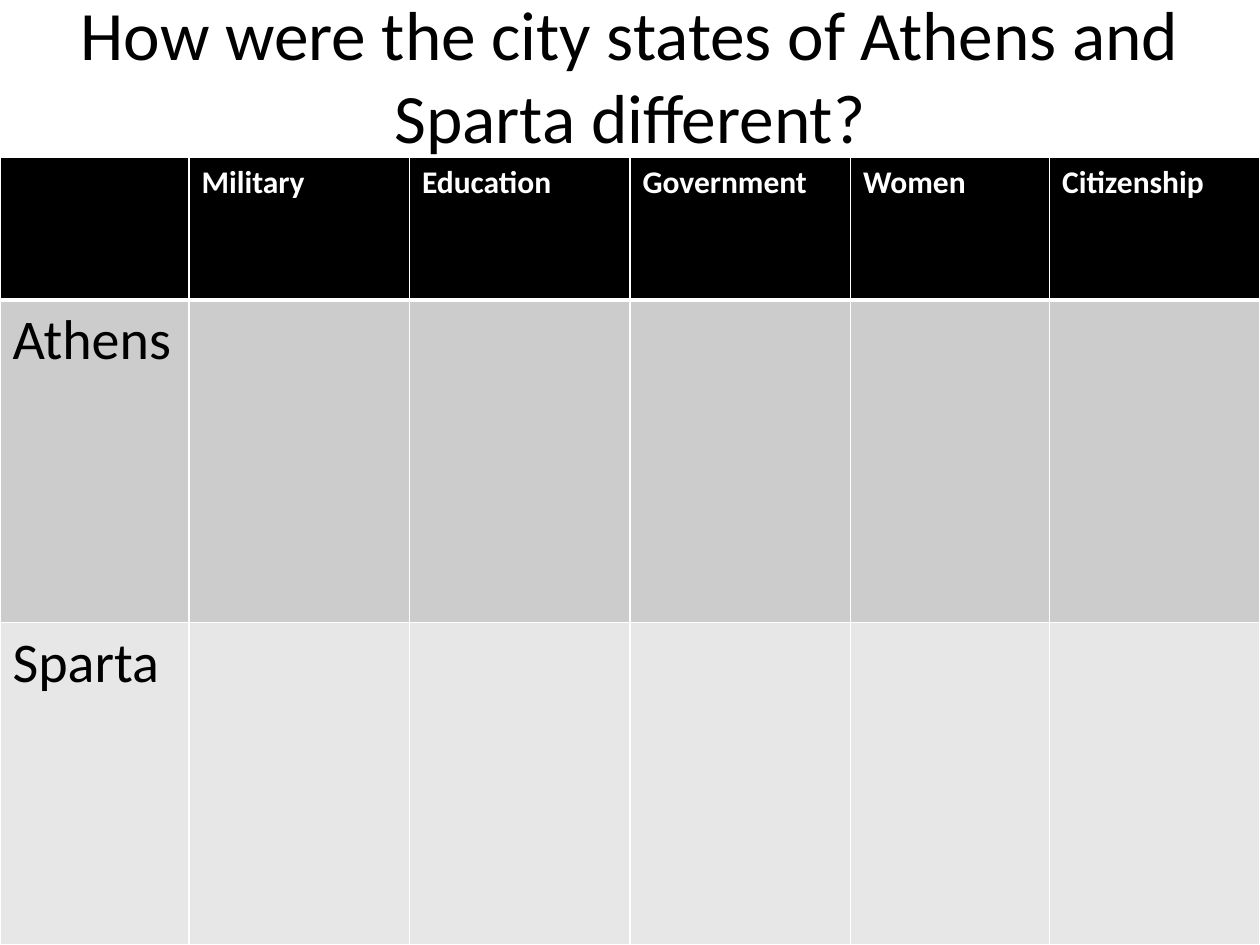
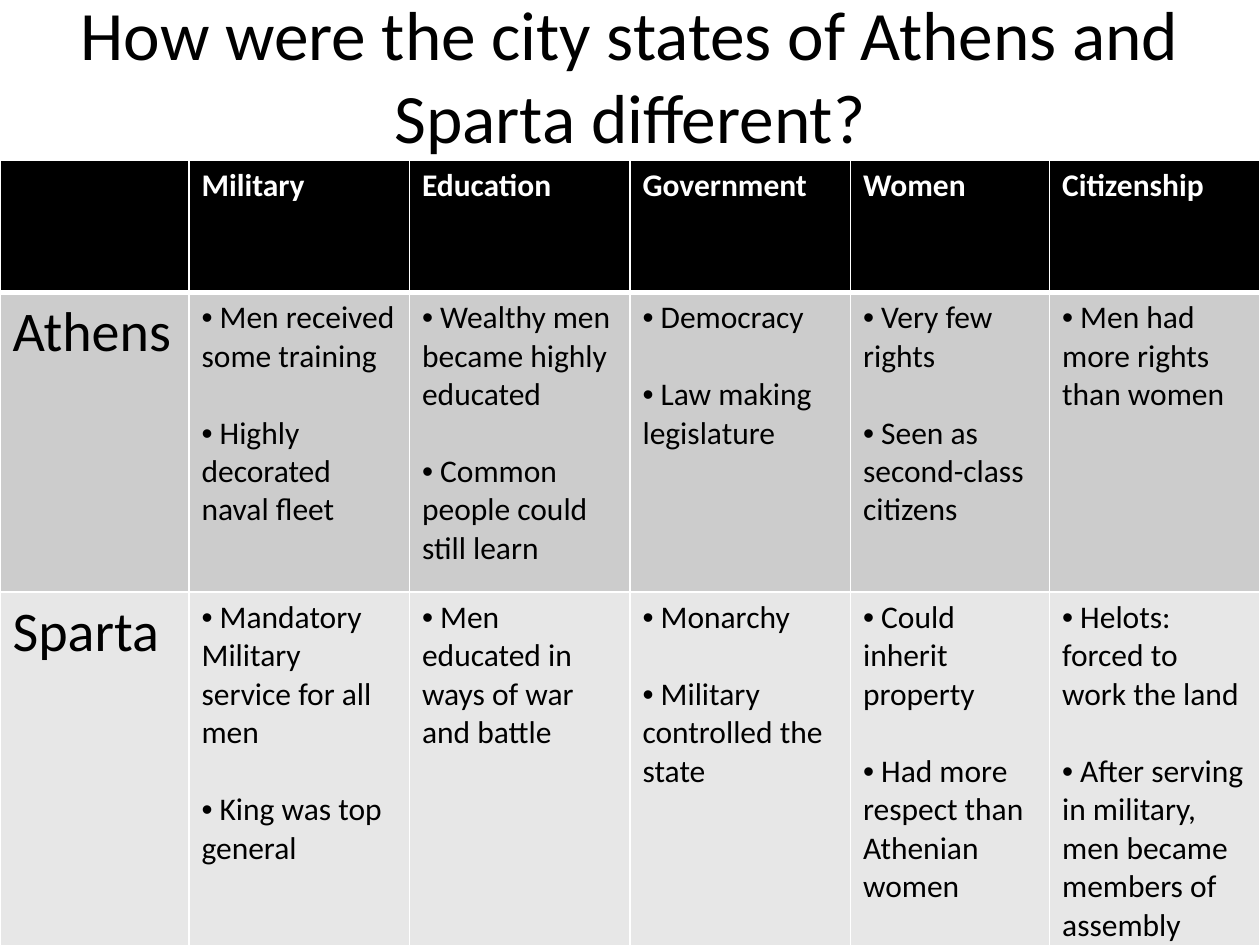
from lxml import etree
from pptx import Presentation
from pptx.dml.color import RGBColor
from pptx.enum.text import MSO_ANCHOR, MSO_AUTO_SIZE, PP_ALIGN
from pptx.oxml.ns import qn
from pptx.util import Inches, Pt

CENTER = PP_ALIGN.CENTER
MIDDLE = MSO_ANCHOR.MIDDLE
NO_AUTOFIT = MSO_AUTO_SIZE.NONE

BLACK = RGBColor(0x00, 0x00, 0x00)
WHITE = RGBColor(0xFF, 0xFF, 0xFF)
MID_GRAY = RGBColor(0xCC, 0xCC, 0xCC)
LIGHT_GRAY = RGBColor(0xE7, 0xE7, 0xE7)
ROW_FILLS = [BLACK, MID_GRAY, LIGHT_GRAY]

FONT = "Calibri"
TITLE = "How were the city states of Athens and Sparta different?"
TOPICS = ["Military", "Education", "Government", "Women", "Citizenship"]
CITIES = ["Athens", "Sparta"]
COLUMN_WIDTHS = [1.5, 1.75, 1.75, 1.75, 1.58, 1.67]

NOTES = [
    [
        ["Men received some training", "Highly decorated naval fleet"],
        ["Wealthy men became highly educated", "Common people could still learn"],
        ["Democracy", "Law making legislature"],
        ["Very few rights", "Seen as second-class citizens"],
        ["Men had more rights than women"],
    ],
    [
        ["Mandatory Military service for all men", "King was top general"],
        ["Men educated in ways of war and battle"],
        ["Monarchy", "Military controlled the state"],
        ["Could inherit property", "Had more respect than Athenian women"],
        ["Helots: forced to work the land",
         "After serving in military, men became members of assembly"],
    ],
]
BLANK_NOTES = [[[] for topic in TOPICS] for city in CITIES]

SLIDES = [
    (1.25, [1.13, 2.56, 2.56], BLANK_NOTES),
    (1.27, [1.05, 2.38, 2.8], NOTES),
]


def style_font(paragraph, size, color, bold=False):
    paragraph.font.name = FONT
    paragraph.font.size = Pt(size)
    paragraph.font.color.rgb = color
    paragraph.font.bold = bold


def style_cell(cell, row):
    properties = cell._tc.get_or_add_tcPr()
    widths = {"lnL": 1, "lnR": 1, "lnT": 3 if row == 1 else 1, "lnB": 3 if row == 0 else 1}
    for side, width in widths.items():
        line = etree.SubElement(properties, qn(f"a:{side}"), w=str(Pt(width)))
        fill = etree.SubElement(line, qn("a:solidFill"))
        etree.SubElement(fill, qn("a:srgbClr"), val=str(WHITE))
    cell.fill.solid()
    cell.fill.fore_color.rgb = ROW_FILLS[row]


presentation = Presentation()
presentation.slide_width = Inches(10)
presentation.slide_height = Inches(7.5)

for table_top, row_heights, notes in SLIDES:
    slide = presentation.slides.add_slide(presentation.slide_layouts[5])

    title = slide.shapes.title
    title.left, title.top = Inches(0.5), Inches(0.3)
    title.width, title.height = Inches(9), Inches(1.25)
    title_frame = title.text_frame
    title_frame.text = TITLE
    title_frame.word_wrap = True
    title_frame.auto_size = NO_AUTOFIT
    title_frame.vertical_anchor = MIDDLE
    title_frame.margin_bottom = Inches(0.72)
    title_frame.paragraphs[0].alignment = CENTER
    style_font(title_frame.paragraphs[0], 39.6, BLACK)

    table = slide.shapes.add_table(
        len(row_heights), len(COLUMN_WIDTHS), Inches(0), Inches(table_top),
        Inches(10), Inches(sum(row_heights))).table
    for column, width in zip(table.columns, COLUMN_WIDTHS):
        column.width = Inches(width)
    for row, height in enumerate(row_heights):
        table.rows[row].height = Inches(height)
        for cell in table.rows[row].cells:
            style_cell(cell, row)

    for column, topic in enumerate(TOPICS, start=1):
        cell = table.cell(0, column)
        cell.text = topic
        style_font(cell.text_frame.paragraphs[0], 18, WHITE, bold=True)

    for row, (city, city_notes) in enumerate(zip(CITIES, notes), start=1):
        cell = table.cell(row, 0)
        cell.text = city
        style_font(cell.text_frame.paragraphs[0], 32, BLACK)
        for column, points in enumerate(city_notes, start=1):
            text_frame = table.cell(row, column).text_frame
            for index, point in enumerate(points):
                paragraph = text_frame.add_paragraph() if index else text_frame.paragraphs[0]
                paragraph.text = f" {point}"
                if index:
                    paragraph.space_before = Pt(22)
                properties = paragraph._p.get_or_add_pPr()
                properties.set("marL", "0")
                properties.set("indent", "0")
                etree.SubElement(properties, qn("a:buFont"), typeface="Arial")
                etree.SubElement(properties, qn("a:buChar"), char="•")
                style_font(paragraph, 18, BLACK)

presentation.save("out.pptx")
